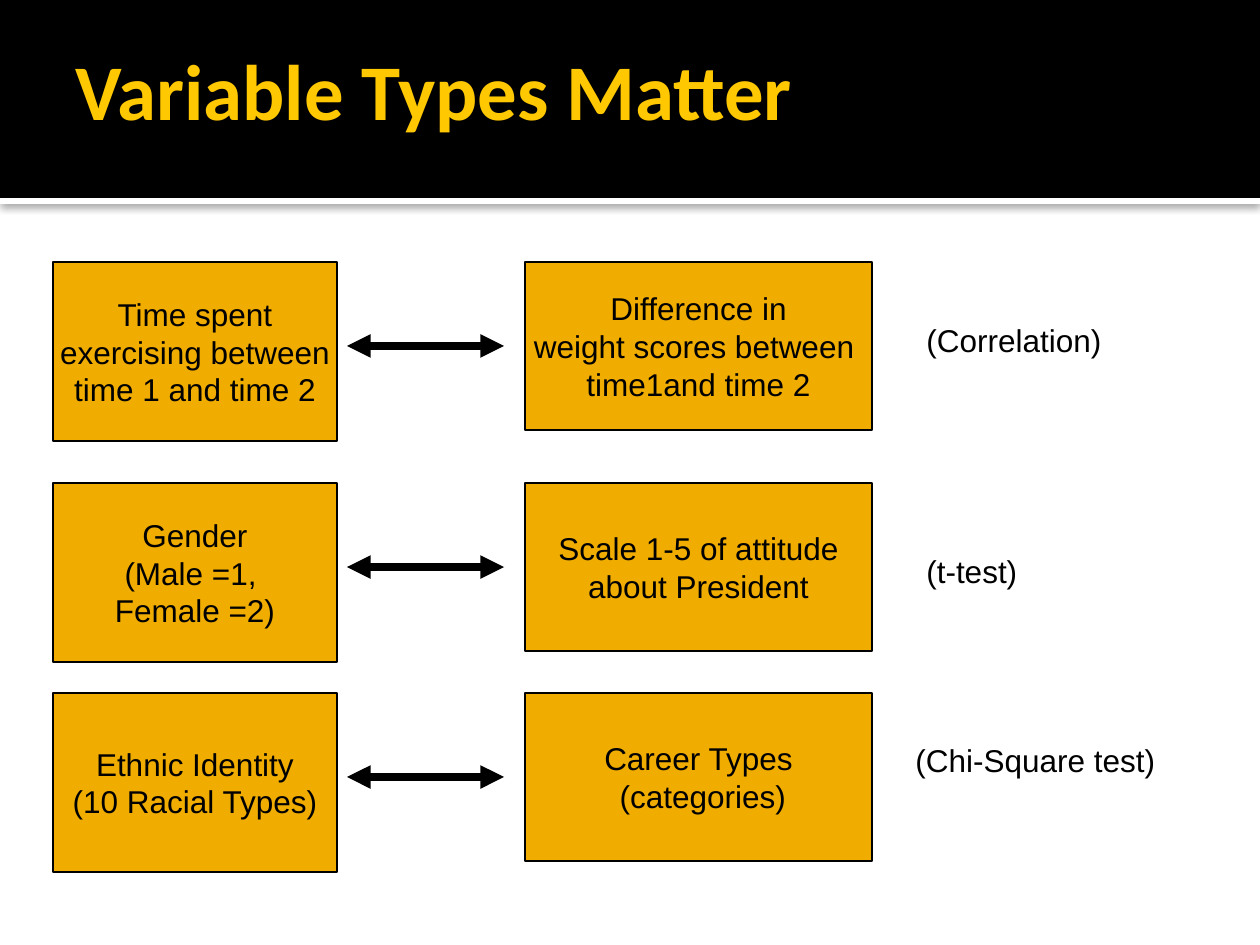
from lxml.etree import SubElement
from pptx import Presentation
from pptx.dml.color import RGBColor
from pptx.enum.shapes import MSO_CONNECTOR, MSO_SHAPE
from pptx.enum.text import MSO_ANCHOR, MSO_AUTO_SIZE, PP_ALIGN
from pptx.oxml.ns import qn
from pptx.util import Emu, Pt

PX = 914400 / 126
BLACK = RGBColor(0x00, 0x00, 0x00)
WHITE = RGBColor(0xFF, 0xFF, 0xFF)
GOLD = RGBColor(0xF0, 0xAD, 0x00)
YELLOW = RGBColor(0xFF, 0xC8, 0x00)


def px(*lengths):
    return [Emu(round(length * PX)) for length in lengths]


def write_text(shape, text, size=18, font="Arial", color=BLACK, bold=False,
               align=PP_ALIGN.LEFT, anchor=MSO_ANCHOR.TOP, wrap=True,
               auto_size=MSO_AUTO_SIZE.NONE):
    frame = shape.text_frame
    frame.text = text
    frame.word_wrap = wrap
    frame.auto_size = auto_size
    frame.vertical_anchor = anchor
    for paragraph in frame.paragraphs:
        paragraph.alignment = align
        for run in paragraph.runs:
            run.font.size = Pt(size)
            run.font.name = font
            run.font.bold = bold
            run.font.color.rgb = color


presentation = Presentation()
presentation.slide_width, presentation.slide_height = px(1260, 945)
slide = presentation.slides.add_slide(presentation.slide_layouts[5])
shapes = slide.shapes

bands = []
for top, height, color in [(198, 6, WHITE), (0, 198, BLACK)]:
    band = shapes.add_shape(MSO_SHAPE.RECTANGLE, *px(0, top, 1260, height))
    band.fill.solid()
    band.fill.fore_color.rgb = color
    band.line.fill.background()
    band.shadow.inherit = False
    bands.append(band)

effects = bands[0].element.spPr.find(qn("a:effectLst"))
shadow = SubElement(effects, qn("a:outerShdw"), blurRad=str(Pt(5)),
                    dist=str(Pt(0.8)), dir="5400000", algn="tl", rotWithShape="0")
shadow_color = SubElement(shadow, qn("a:srgbClr"), val=str(BLACK))
SubElement(shadow_color, qn("a:alpha"), val="60000")

title = shapes.title
title.left, title.top, title.width, title.height = px(63, 21, 1124, 136)
write_text(title, "Variable Types Matter", size=45, font="Calibri", color=YELLOW,
           bold=True, anchor=MSO_ANCHOR.MIDDLE)
frame = title.text_frame
frame.margin_left, frame.margin_right, frame.margin_top, frame.margin_bottom = (
    Pt(7.2), Pt(3.6), Pt(3.6), Pt(3.6))
bands[1].element.addnext(title.element)

comparisons = [
    (262, "Time spent\nexercising between\ntime 1 and time 2",
     "Difference in\nweight scores between \ntime1and time 2",
     "(Correlation)", 914, 315, 252),
    (483, "Gender\n(Male =1, \nFemale =2)",
     "Scale 1-5 of attitude\nabout President",
     "(t-test)", 914, 546, 252),
    (693, "Ethnic Identity\n(10 Racial Types)",
     "Career Types\n (categories)",
     "(Chi-Square test)", 903, 735, 273),
]

for top, first, second, test, test_left, test_top, test_width in comparisons:
    for text, left, width, height in [(first, 53, 284, 179), (second, 525, 347, 168)]:
        box = shapes.add_shape(MSO_SHAPE.RECTANGLE, *px(left, top, width, height))
        box.fill.solid()
        box.fill.fore_color.rgb = GOLD
        box.line.color.rgb = BLACK
        box.line.width = Pt(0.75)
        box.shadow.inherit = False
        write_text(box, text, align=PP_ALIGN.CENTER, anchor=MSO_ANCHOR.MIDDLE, wrap=False)

    arrow = shapes.add_connector(MSO_CONNECTOR.STRAIGHT, *px(347, top + 84, 504, top + 84))
    arrow.line.color.rgb = BLACK
    arrow.line.width = Pt(4.5)
    line = arrow.line._get_or_add_ln()
    for end in ("a:headEnd", "a:tailEnd"):
        SubElement(line, qn(end), type="triangle")
    SubElement(arrow.element.spPr, qn("a:effectLst"))

    label = shapes.add_textbox(*px(test_left, test_top, test_width, 51))
    write_text(label, test, auto_size=MSO_AUTO_SIZE.SHAPE_TO_FIT_TEXT)

presentation.save("out.pptx")
